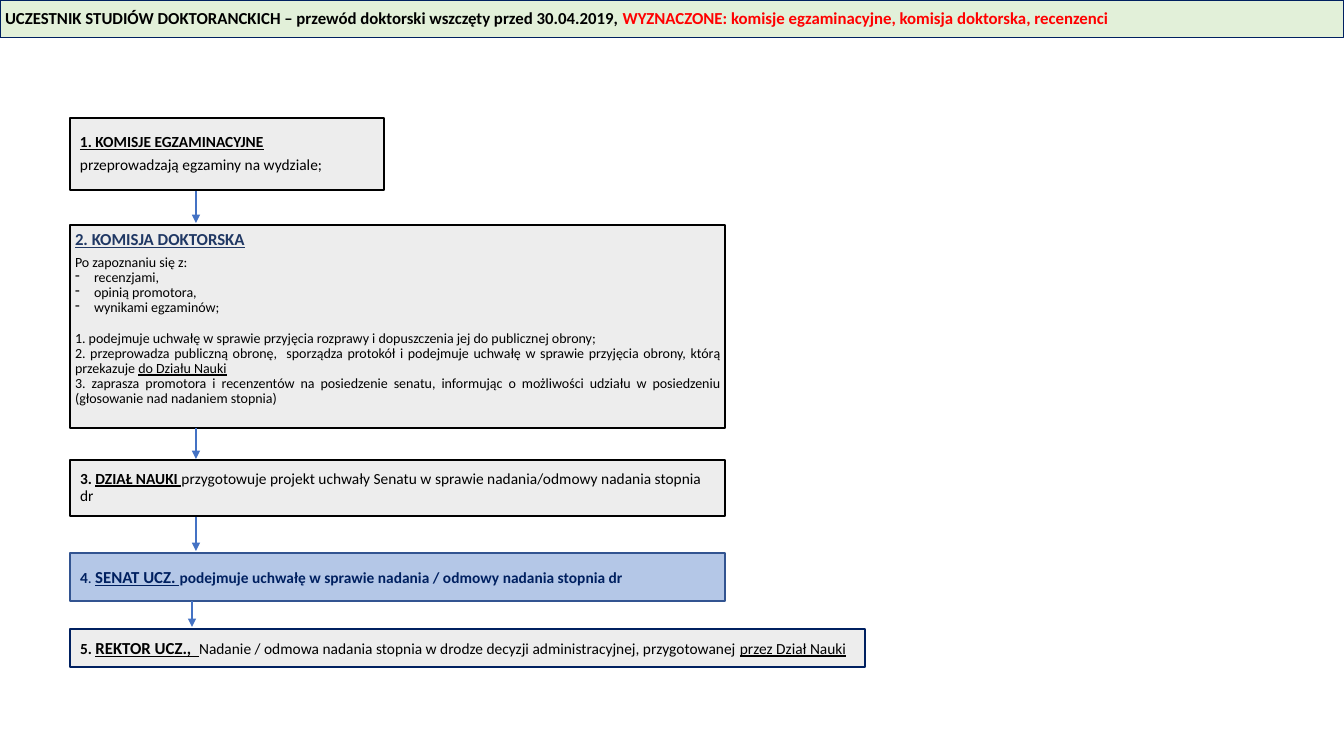
import pptx
import pptx.util
import pptx.dml.color
import pptx.enum.shapes
import pptx.enum.text
import pptx.oxml
import pptx.oxml.ns

RGBColor = pptx.dml.color.RGBColor
BLACK = RGBColor(0x00, 0x00, 0x00)
RED = RGBColor(0xFF, 0x00, 0x00)
NAVY = RGBColor(0x00, 0x20, 0x60)
DARK_BLUE = RGBColor(0x20, 0x38, 0x64)
EDGE_BLUE = RGBColor(0x32, 0x54, 0x91)
ARROW_BLUE = RGBColor(0x44, 0x72, 0xC4)
LIGHT_BLUE = RGBColor(0xB4, 0xC7, 0xE7)
LIGHT_GREEN = RGBColor(0xE2, 0xF0, 0xD9)
LIGHT_GRAY = RGBColor(0xED, 0xED, 0xED)

FONT = "Calibri"
SLIDE_WIDTH, SLIDE_HEIGHT = 1344, 756
SCALE = 12192000 / SLIDE_WIDTH
LEFT, STEP_WIDTH = 70, 655
LEFT_ALIGN = pptx.enum.text.PP_ALIGN.LEFT
JUSTIFY = pptx.enum.text.PP_ALIGN.JUSTIFY


def px(length):
    return pptx.util.Emu(round(length * SCALE))


def add_run(paragraph, text, size=11, color=BLACK, bold=False, underline=False):
    run = paragraph.add_run()
    run.text = text
    run.font.name = FONT
    run.font.size = pptx.util.Pt(size)
    run.font.color.rgb = color
    run.font.bold = bold
    run.font.underline = underline


def format_paragraph(paragraph, align=LEFT_ALIGN, spacing=0.9, before=0, after=0):
    paragraph.alignment = align
    paragraph.line_spacing = spacing
    paragraph.space_before = pptx.util.Pt(before)
    paragraph.space_after = pptx.util.Pt(after)


def add_dash(paragraph, indent):
    properties = paragraph._p.get_or_add_pPr()
    properties.set("marL", str(px(indent)))
    properties.set("indent", str(-px(indent)))
    bullet = pptx.oxml.parse_xml(f'<a:buChar {pptx.oxml.ns.nsdecls("a")} char="-"/>')
    properties.append(bullet)


def format_box(shape, box, fill, edge, edge_width=1, margin=10, bottom=5):
    shape.left, shape.top, shape.width, shape.height = map(px, box)
    shape.fill.solid()
    shape.fill.fore_color.rgb = fill
    shape.line.color.rgb = edge
    shape.line.width = pptx.util.Pt(edge_width)
    frame = shape.text_frame
    frame.word_wrap = True
    frame.auto_size = pptx.enum.text.MSO_AUTO_SIZE.NONE
    frame.vertical_anchor = pptx.enum.text.MSO_ANCHOR.MIDDLE
    frame.margin_left = frame.margin_right = px(margin)
    frame.margin_top, frame.margin_bottom = px(5), px(bottom)
    return frame


def add_box(slide, box, fill=LIGHT_GRAY, edge=BLACK, **options):
    shape = slide.shapes.add_shape(pptx.enum.shapes.MSO_SHAPE.RECTANGLE, *map(px, box))
    shape.shadow.inherit = False
    return format_box(shape, box, fill, edge, **options)


def add_arrow(slide, start, end):
    connector = slide.shapes.add_connector(
        pptx.enum.shapes.MSO_CONNECTOR.STRAIGHT, *map(px, start + end))
    connector.line.color.rgb = ARROW_BLUE
    connector.line.width = pptx.util.Pt(1.5)
    namespace = pptx.oxml.ns.nsdecls("a")
    connector.line._get_or_add_ln().append(
        pptx.oxml.parse_xml(f'<a:tailEnd {namespace} type="triangle"/>'))
    connector._element.spPr.append(pptx.oxml.parse_xml(f"<a:effectLst {namespace}/>"))


def fill_header(slide, box):
    frame = format_box(slide.shapes.title, box, LIGHT_GREEN, NAVY, 0.75, margin=5)
    paragraph = frame.paragraphs[0]
    format_paragraph(paragraph)
    add_run(paragraph, "UCZESTNIK STUDIÓW DOKTORANCKICH – przewód doktorski wszczęty "
            "przed 30.04.2019, ", 12, bold=True)
    add_run(paragraph, "WYZNACZONE: komisje egzaminacyjne, komisja doktorska, recenzenci",
            12, RED, bold=True)


def add_exam_boards(slide, box):
    frame = add_box(slide, box)
    heading = frame.paragraphs[0]
    format_paragraph(heading, after=4)
    add_run(heading, "1. KOMISJE EGZAMINACYJNE", bold=True, underline=True)
    task = frame.add_paragraph()
    format_paragraph(task, JUSTIFY)
    add_run(task, "przeprowadzają egzaminy na wydziale; ")


def add_doctoral_board(slide, box):
    frame = add_box(slide, box, margin=5, bottom=20)
    heading = frame.paragraphs[0]
    format_paragraph(heading, after=4)
    add_run(heading, "2. KOMISJA DOKTORSKA", 12, DARK_BLUE, bold=True, underline=True)

    def add_line(text, before=0):
        paragraph = frame.add_paragraph()
        format_paragraph(paragraph, JUSTIFY, before=before)
        add_run(paragraph, text, 10)
        return paragraph

    add_line("Po zapoznaniu się z:")
    for document in ("recenzjami, ", "opinią promotora, ", "wynikami egzaminów;"):
        add_dash(add_line(document), 19)
    add_line("1. podejmuje uchwałę w sprawie przyjęcia rozprawy i dopuszczenia jej "
             "do publicznej obrony;", before=11)
    defence = add_line("2. przeprowadza publiczną obronę,  sporządza protokół i podejmuje "
                       "uchwałę w sprawie przyjęcia obrony, którą przekazuje ")
    add_run(defence, "do Działu Nauki", 10, underline=True)
    add_line("3. zaprasza promotora i recenzentów na posiedzenie senatu, informując "
             "o możliwości udziału w posiedzeniu (głosowanie nad nadaniem stopnia)")


def add_science_office(slide, box):
    paragraph = add_box(slide, box).paragraphs[0]
    format_paragraph(paragraph)
    add_run(paragraph, "3. ", bold=True)
    add_run(paragraph, "DZIAŁ NAUKI ", bold=True, underline=True)
    add_run(paragraph, "przygotowuje projekt uchwały Senatu w sprawie nadania/odmowy "
            "nadania stopnia dr")


def add_senate(slide, box):
    paragraph = add_box(slide, box, LIGHT_BLUE, EDGE_BLUE).paragraphs[0]
    format_paragraph(paragraph, spacing=1.0)
    add_run(paragraph, "4", color=NAVY, bold=True)
    add_run(paragraph, ". ", color=NAVY)
    add_run(paragraph, "SENAT UCZ. ", 12, NAVY, bold=True, underline=True)
    add_run(paragraph, "podejmuje uchwałę w sprawie nadania / odmowy nadania stopnia dr",
            color=NAVY, bold=True)


def add_rector(slide, box):
    paragraph = add_box(slide, box, edge=NAVY, edge_width=1.5).paragraphs[0]
    format_paragraph(paragraph, spacing=1.0)
    add_run(paragraph, "5. ", bold=True)
    add_run(paragraph, "REKTOR UCZ.,  ", 12, bold=True, underline=True)
    add_run(paragraph, "Nadanie / odmowa nadania stopnia w drodze decyzji "
            "administracyjnej, przygotowanej ")
    add_run(paragraph, "przez Dział Nauki", underline=True)


def main():
    presentation = pptx.Presentation()
    presentation.slide_width = px(SLIDE_WIDTH)
    presentation.slide_height = px(SLIDE_HEIGHT)
    slide = presentation.slides.add_slide(presentation.slide_layouts[5])
    fill_header(slide, (0, 0, SLIDE_WIDTH, 38))
    add_exam_boards(slide, (LEFT, 118, 314, 72))
    add_doctoral_board(slide, (LEFT, 225, STEP_WIDTH, 203))
    add_science_office(slide, (LEFT, 460, STEP_WIDTH, 56))
    add_senate(slide, (LEFT, 553, STEP_WIDTH, 48))
    add_rector(slide, (LEFT, 629, 795, 38))
    for x, top, bottom in ((196, 191, 223), (196, 428, 459), (196, 517, 551), (192, 601, 627)):
        add_arrow(slide, (x, top), (x, bottom))
    presentation.save("out.pptx")


if __name__ == "__main__":
    main()
